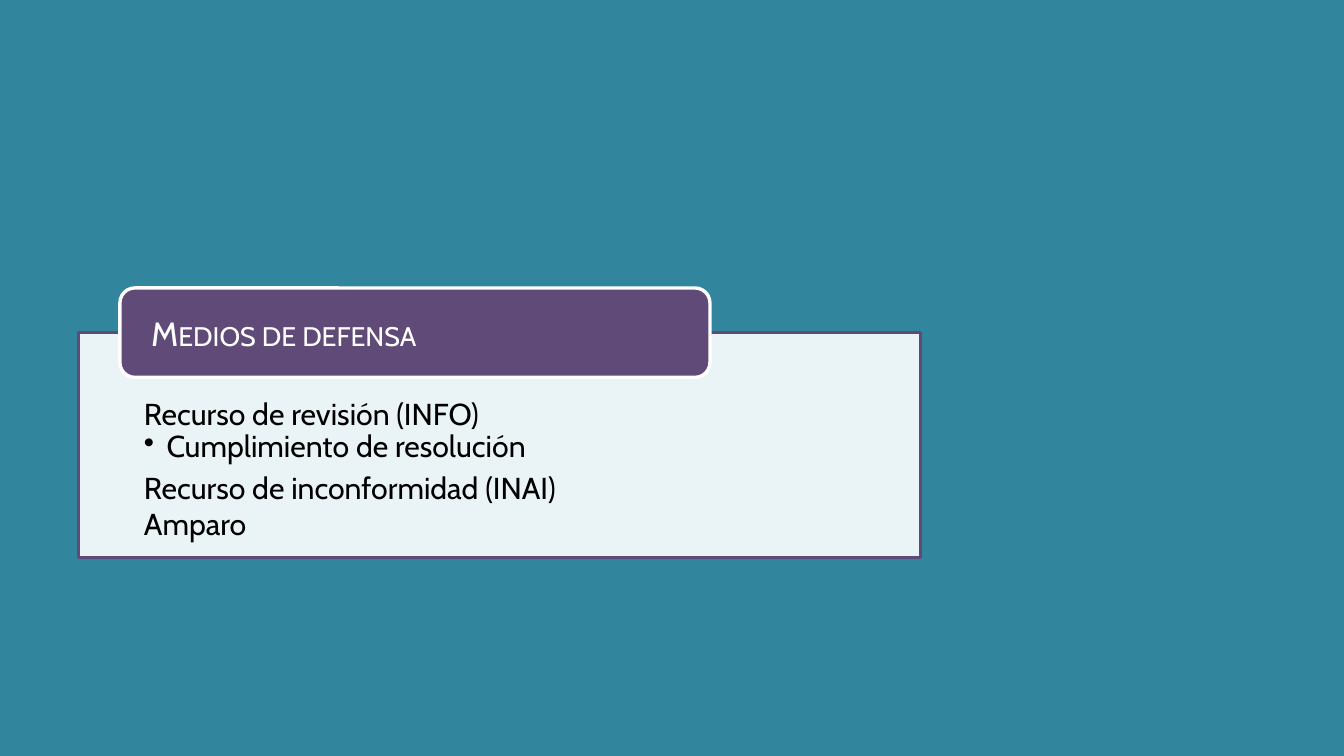
"""Build the slide on means of defence."""
from dataclasses import dataclass

from lxml.etree import SubElement
from pptx import Presentation
from pptx.dml.color import RGBColor
from pptx.enum.shapes import MSO_SHAPE
from pptx.enum.text import MSO_ANCHOR, PP_ALIGN
from pptx.oxml.ns import qn
from pptx.shapes.autoshape import Shape
from pptx.slide import Slide
from pptx.util import Pt

TEAL, PLUM, WHITE, BLACK = "31859C", "5F4A78", "FFFFFF", "000000"


@dataclass
class Line:
    text: str
    bullet: bool = False


@dataclass
class Panel:
    form: MSO_SHAPE
    area: tuple[float, float, float, float]
    inset: tuple[float, float, float, float]
    fill: str
    edge: str
    ink: str
    size: float
    anchor: MSO_ANCHOR
    lines: list[Line]
    alpha: int = 100
    small: bool = False


PANELS = [
    Panel(MSO_SHAPE.RECTANGLE, (46.8, 198, 501, 134), (38.9, 37.4, 38.9, 10),
          WHITE, PLUM, BLACK, 18, MSO_ANCHOR.TOP,
          [Line("Recurso de revisión (INFO)"),
           Line("Cumplimiento de resolución", bullet=True),
           Line("Recurso de inconformidad (INAI)"),
           Line("Amparo")], alpha=90),
    Panel(MSO_SHAPE.ROUNDED_RECTANGLE, (71.4, 171.4, 351.2, 53.2),
          (16, 0, 16, 0), PLUM, WHITE, WHITE, 20, MSO_ANCHOR.MIDDLE,
          [Line("Medios de defensa")], small=True),
]


def color(code: str) -> RGBColor:
    return RGBColor.from_string(code)


def add_text(shape: Shape, panel: Panel) -> None:
    frame = shape.text_frame
    frame.word_wrap = True
    frame.vertical_anchor = panel.anchor
    (frame.margin_left, frame.margin_top,
     frame.margin_right, frame.margin_bottom) = map(Pt, panel.inset)
    for i, line in enumerate(panel.lines):
        para = frame.add_paragraph() if i else frame.paragraphs[0]
        para.alignment = PP_ALIGN.LEFT
        run = para.add_run()
        run.text = line.text
        if line.bullet:
            para.line_spacing = 0.9
            para.space_after = Pt(2.7)
            props = para._p.get_or_add_pPr()
            props.set("marL", str(Pt(13.5)))
            props.set("indent", str(Pt(-13.5)))
            SubElement(props, qn("a:buChar")).set("char", "•")
        font = para.font
        font.name = "Cabin"
        font.size = Pt(panel.size)
        font.color.rgb = color(panel.ink)
        if panel.small:
            run._r.get_or_add_rPr().set("cap", "small")


def add_panel(slide: Slide, panel: Panel) -> None:
    shape = slide.shapes.add_shape(panel.form, *map(Pt, panel.area))
    shape.shadow.inherit = False
    shape.fill.solid()
    shape.fill.fore_color.rgb = color(panel.fill)
    if panel.alpha < 100:
        tone = shape._element.spPr.find(qn("a:solidFill"))[0]
        SubElement(tone, qn("a:alpha")).set("val", str(panel.alpha * 1000))
    shape.line.color.rgb = color(panel.edge)
    shape.line.width = Pt(2)
    add_text(shape, panel)


def main() -> None:
    deck = Presentation()
    deck.slide_width, deck.slide_height = Pt(800), Pt(450)
    slide = deck.slides.add_slide(deck.slide_layouts[6])
    back = slide.background.fill
    back.solid()
    back.fore_color.rgb = color(TEAL)
    for panel in PANELS:
        add_panel(slide, panel)
    deck.save("out.pptx")


if __name__ == "__main__":
    main()
